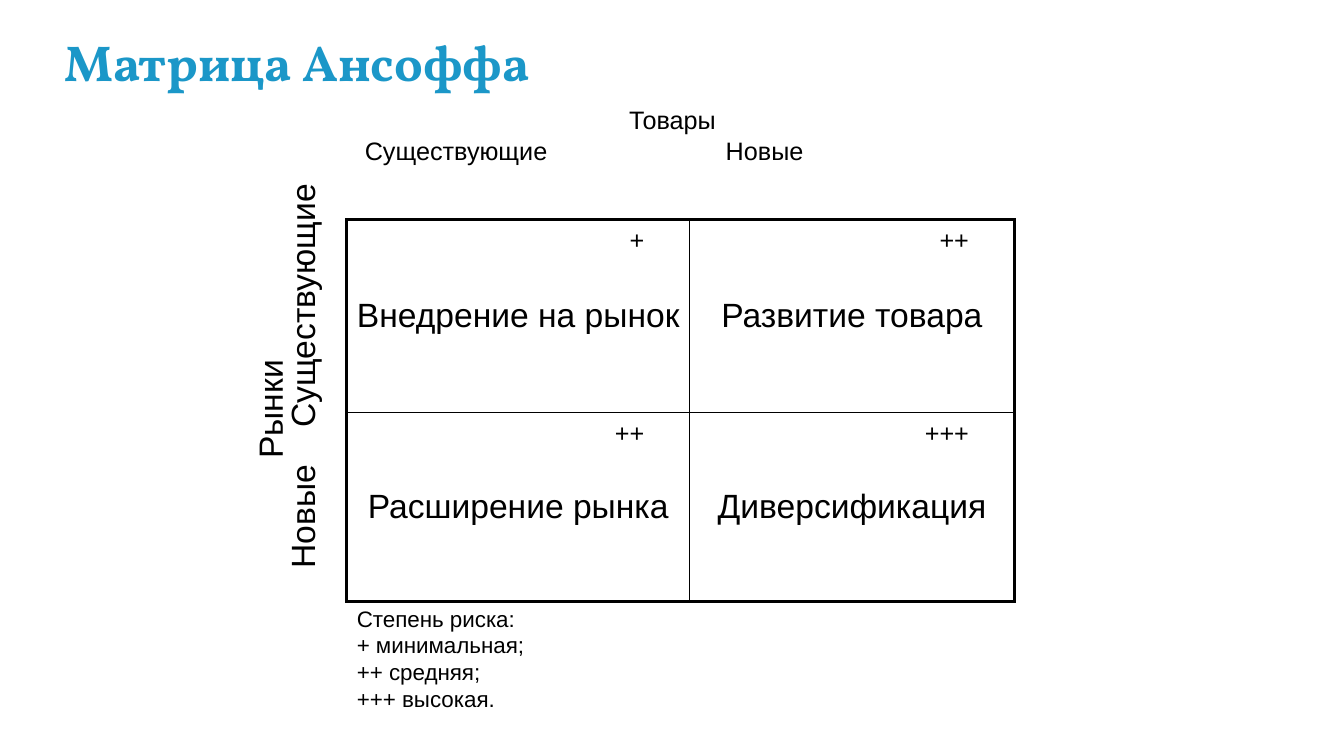
from lxml import etree
from pptx import Presentation, util as u
from pptx.dml.color import RGBColor
from pptx.enum import text as t
from pptx.oxml.ns import qn

theme = {
    "head": "1B97C8", "ink": "000000",
    "title": 36, "big": 24, "mid": 18, "small": 16,
    "serif": "Vollkorn", "sans": "Arial",
    "thick": 2.25, "thin": 1,
}
left, mid, right = t.PP_ALIGN.LEFT, t.PP_ALIGN.CENTER, t.PP_ALIGN.RIGHT

# Grid of the matrix, in inches
cols, rows = [3.4, 3.22], [1.91, 1.88]
x0, y0 = 3.44, 2.18
cells = [["Внедрение на рынок", "Развитие товара"],
         ["Расширение рынка", "Диверсификация"]]
risks = [["+", "++"], ["++", "+++"]]


def write(frame, lines, size, font="sans", ink="ink", bold=False, space=None):
    """Fill a text frame with (wording, alignment, tab stops) lines."""
    for n, (words, align, tabs) in enumerate(lines):
        para = frame.paragraphs[0] if n == 0 else frame.add_paragraph()
        para.alignment, para.line_spacing = align, space
        run = para.add_run()
        run.text = words
        look = {"name": theme[font], "size": u.Pt(theme[size]), "bold": bold}
        for key, val in look.items():
            setattr(run.font, key, val)
        run.font.color.rgb = RGBColor.from_string(theme[ink])
        if tabs:
            stops = etree.SubElement(para._p.get_or_add_pPr(), qn("a:tabLst"))
            for pos in tabs:
                etree.SubElement(stops, qn("a:tab"), pos=str(u.Inches(pos)), algn="l")


def label(x, y, w, h, lines, size, space=None, **form):
    """Add a wrapped text box, with frame settings from form."""
    box = slide.shapes.add_textbox(*map(u.Inches, (x, y, w, h)))
    for key, val in {"word_wrap": True, **form}.items():
        setattr(box.text_frame, key, val)
    write(box.text_frame, lines, size, space=space)
    return box


deck = Presentation()
deck.slide_width, deck.slide_height = u.Inches(13.33), u.Inches(7.5)
slide = deck.slides.add_slide(deck.slide_layouts[5])

# Title
title = slide.shapes.title
place = {"left": 0.54, "top": 0.3, "width": 9, "height": 0.69}
for key, val in place.items():
    setattr(title, key, u.Inches(val))
title.text_frame.vertical_anchor = t.MSO_ANCHOR.MIDDLE
write(title.text_frame, [("Матрица Ансоффа", left, None)], "title",
      font="serif", ink="head", bold=True, space=0.9)

# Matrix
grid = slide.shapes.add_table(2, 2, *map(u.Inches, (x0, y0, sum(cols), sum(rows)))).table
grid.first_row = grid.horz_banding = False
for n in range(2):
    grid.columns[n].width = u.Inches(cols[n])
    grid.rows[n].height = u.Inches(rows[n])
for r, row in enumerate(cells):
    for c, words in enumerate(row):
        cell = grid.cell(r, c)
        cell.vertical_anchor = t.MSO_ANCHOR.MIDDLE
        write(cell.text_frame, [(words, mid, None)], "big")
        # Thick outside, thin inside
        outer = {"a:lnL": c == 0, "a:lnR": c == 1, "a:lnT": r == 0, "a:lnB": r == 1}
        for tag, edge in outer.items():
            wide = u.Pt(theme["thick" if edge else "thin"])
            line = etree.SubElement(cell._tc.get_or_add_tcPr(), qn(tag), w=str(wide))
            fill = etree.SubElement(line, qn("a:solidFill"))
            etree.SubElement(fill, qn("a:srgbClr"), val=theme["ink"])
        cell.fill.background()

# Market axis, read upwards
side = label(0.45, 3.59, 5.04, 0.94,
             [("Рынки", mid, None), ("\tНовые\tСуществующие", left, [0.84, 2.24])],
             "big", space=0.8)
side.rotation = 270

# Product axis
label(3.52, 0.99, 6.3, 1.02,
      [("Товары", mid, None), ("Существующие\tНовые", left, [3.58])], "mid")

# Risk marks in the upper right corners
for r, row in enumerate(risks):
    for c, sign in enumerate(row):
        edge = x0 + sum(cols[:c + 1])
        label(edge - 1.02, y0 + sum(rows[:r]), 1.02, 0.79, [(sign, right, None)],
              "mid", margin_left=0, margin_right=u.Inches(0.45))

# Legend
notes = ["Степень риска:", "+ минимальная;", "++ средняя;", "+++ высокая."]
label(x0, 5.95, 3.78, 1.55, [(note, left, None) for note in notes], "small")

deck.save("out.pptx")
